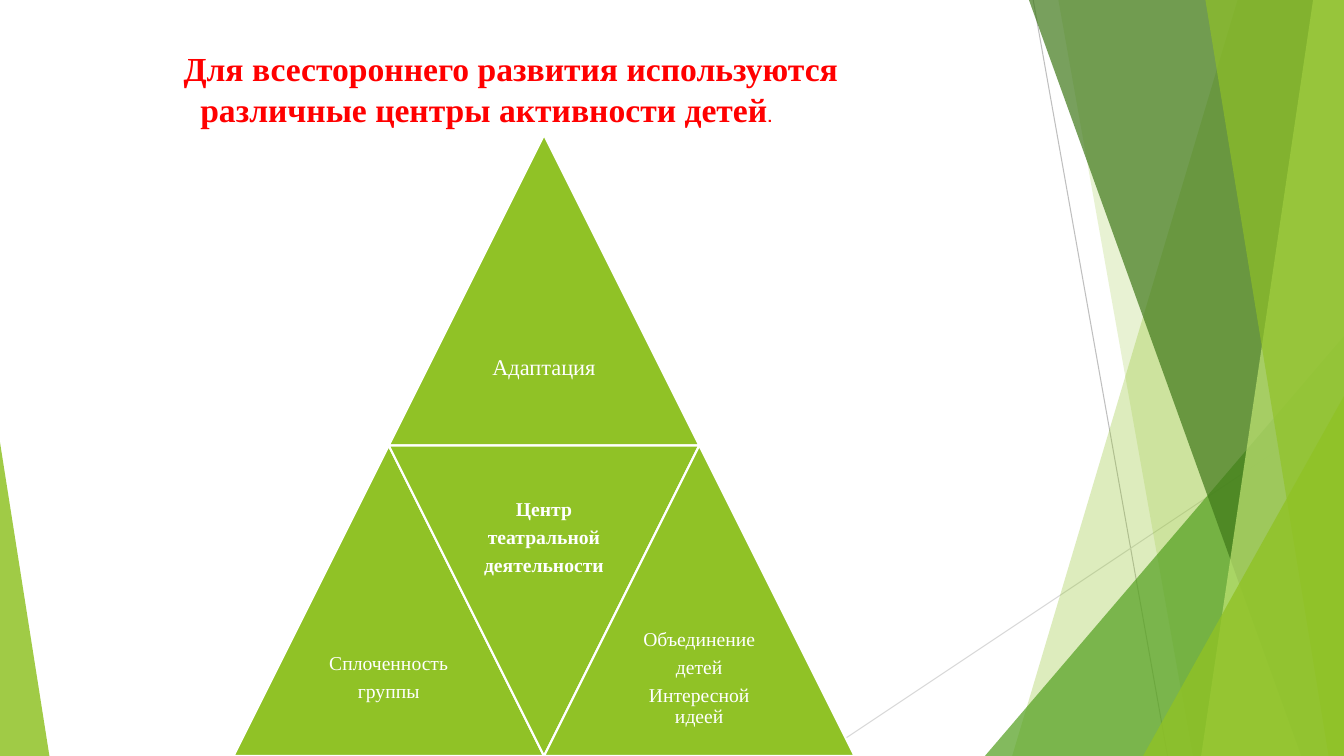
from lxml.etree import SubElement
from pptx import Presentation
from pptx.dml.color import RGBColor
from pptx.enum.shapes import MSO_CONNECTOR, MSO_SHAPE
from pptx.enum.text import MSO_ANCHOR, PP_ALIGN
from pptx.oxml.ns import qn
from pptx.util import Pt

WIDTH, HEIGHT = 960, 540
LEAF = RGBColor(0x90, 0xC2, 0x26)
GRASS = RGBColor(0x54, 0xA0, 0x21)
FOREST = RGBColor(0x3F, 0x78, 0x19)
LIME = RGBColor(0xC0, 0xE4, 0x74)
GRAY = RGBColor(0xBF, 0xBF, 0xBF)
LIGHT_GRAY = RGBColor(0xD9, 0xD9, 0xD9)
WHITE = RGBColor(0xFF, 0xFF, 0xFF)
RED = RGBColor(0xFF, 0x00, 0x00)

SERIF = "Times New Roman"
HALF_SIDE = 110.9
SIDE = 2 * HALF_SIDE
PYRAMID_LEFT = 166.8
PYRAMID_TOP = HEIGHT - 2 * SIDE
INSET = 5

TITLE_FORMAT = {"name": SERIF, "size": Pt(24), "bold": True}
PERIOD_FORMAT = {"name": "Cabin", "size": Pt(18), "bold": False}


def set_attributes(target, values):
    for name, value in values.items():
        setattr(target, name, value)


def paint(shape, color, opacity=100):
    shape.shadow.inherit = False
    shape.fill.solid()
    shape.fill.fore_color.rgb = color
    shape.line.fill.background()
    if opacity < 100:
        color_element = shape._element.spPr.find(qn("a:solidFill"))[0]
        SubElement(color_element, qn("a:alpha"), val=str(opacity * 1000))


def add_line(slide, start, end, color):
    points = [Pt(value) for value in (*start, *end)]
    connector = slide.shapes.add_connector(MSO_CONNECTOR.STRAIGHT, *points)
    connector.line.color.rgb = color
    connector.line.width = Pt(0.75)
    SubElement(connector._element.spPr, qn("a:effectLst"))


def add_band(slide, top_left, top_right, bottom_left, color, opacity):
    corners = [(top_right, 0), (WIDTH, HEIGHT), (bottom_left, HEIGHT)]
    if top_right < WIDTH:
        corners.insert(1, (WIDTH, 0))
    builder = slide.shapes.build_freeform(Pt(top_left), 0)
    builder.add_line_segments([(Pt(x), Pt(y)) for x, y in corners])
    paint(builder.convert_to_shape(), color, opacity)


def add_triangle(slide, left, top, width, height, color, opacity=100, apex=0.5):
    box = [Pt(value) for value in (left, top, width, height)]
    triangle = slide.shapes.add_shape(MSO_SHAPE.ISOSCELES_TRIANGLE, *box)
    triangle.adjustments[0] = apex
    paint(triangle, color, opacity)
    return triangle


def add_text_box(slide, left, top, width, height, values):
    box = [Pt(value) for value in (left, top, width, height)]
    frame = slide.shapes.add_textbox(*box).text_frame
    set_attributes(frame, {"word_wrap": True, **values})
    return frame


def add_run(paragraph, text, values, color):
    run = paragraph.add_run()
    run.text = text
    set_attributes(run.font, values)
    run.font.color.rgb = color


def add_paragraphs(frame, count):
    return [frame.paragraphs[0]] + [frame.add_paragraph() for _ in range(count - 1)]


def add_center(slide, column, row, lines, size, bold=False, inverted=False, drop=0):
    left = PYRAMID_LEFT + column * HALF_SIDE
    top = PYRAMID_TOP + row * SIDE
    triangle = add_triangle(slide, left, top, SIDE, SIDE, LEAF)
    triangle.rotation = 180 if inverted else 0
    triangle.line.color.rgb = WHITE
    triangle.line.width = Pt(1.5)
    label_top = top if inverted else top + HALF_SIDE
    frame = add_text_box(slide, left + HALF_SIDE / 2, label_top, HALF_SIDE, HALF_SIDE, {
        "vertical_anchor": MSO_ANCHOR.MIDDLE,
        "margin_left": Pt(INSET),
        "margin_right": Pt(INSET),
        "margin_top": Pt(INSET + drop),
        "margin_bottom": Pt(INSET),
    })
    for paragraph, line in zip(add_paragraphs(frame, len(lines)), lines):
        set_attributes(paragraph, {
            "alignment": PP_ALIGN.CENTER,
            "line_spacing": 0.9,
            "space_after": Pt(0.35 * size),
        })
        add_run(paragraph, line, {"name": SERIF, "size": Pt(size), "bold": bold}, WHITE)


def add_title(slide, lines, indents):
    frame = add_text_box(slide, 46, 31, 710, 65.5, {})
    paragraphs = add_paragraphs(frame, len(lines))
    for paragraph, line, indent in zip(paragraphs, lines, indents):
        paragraph._p.get_or_add_pPr().set("marL", str(Pt(indent)))
        add_run(paragraph, line, TITLE_FORMAT, RED)
    add_run(paragraphs[-1], ".", PERIOD_FORMAT, RED)


def add_backdrop(slide):
    add_line(slide, (738, 0), (834, HEIGHT), GRAY)
    add_line(slide, (WIDTH, 290), (585, HEIGHT), LIGHT_GRAY)
    add_band(slide, 884, WIDTH, 723, LEAF, 30)
    add_band(slide, 756, WIDTH, 852, LEAF, 20)
    add_triangle(slide, 703.5, 240, 256.5, 300, GRASS, 72, 1)
    add_band(slide, 735, WIDTH, 929.5, FOREST, 70)
    add_band(slide, 938, WIDTH, 858, LIME, 70)
    add_band(slide, 861, WIDTH, 949, LEAF, 65)
    add_triangle(slide, 816.5, 283, 143.5, 257, LEAF, 80, 1)
    add_triangle(slide, 0, 316, 35.3, 224, LEAF, 85, 0)


def main():
    presentation = Presentation()
    presentation.slide_width = Pt(WIDTH)
    presentation.slide_height = Pt(HEIGHT)
    slide = presentation.slides.add_slide(presentation.slide_layouts[6])
    add_backdrop(slide)
    add_center(slide, 1, 0, ["Адаптация"], 16)
    add_center(slide, 0, 1, ["Сплоченность", "группы"], 14)
    add_center(slide, 1, 1, ["Центр", "театральной", "деятельности"], 14,
               bold=True, inverted=True, drop=22)
    add_center(slide, 2, 1, ["Объединение", "детей", "Интересной идеей"], 14)
    add_title(slide, [
        "Для всестороннего развития используются",
        "различные центры активности детей",
    ], [78, 90])
    presentation.save("out.pptx")


if __name__ == "__main__":
    main()
